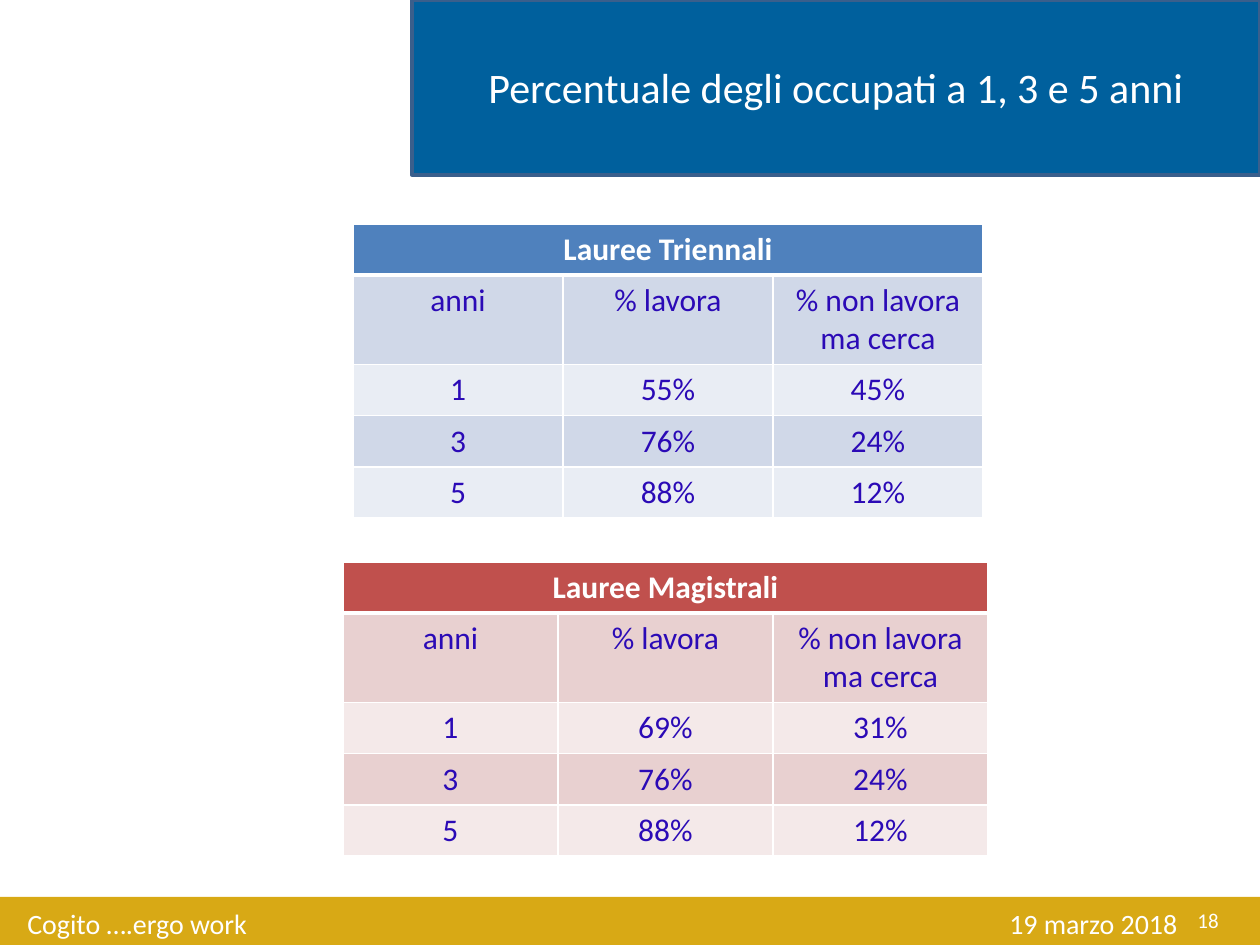
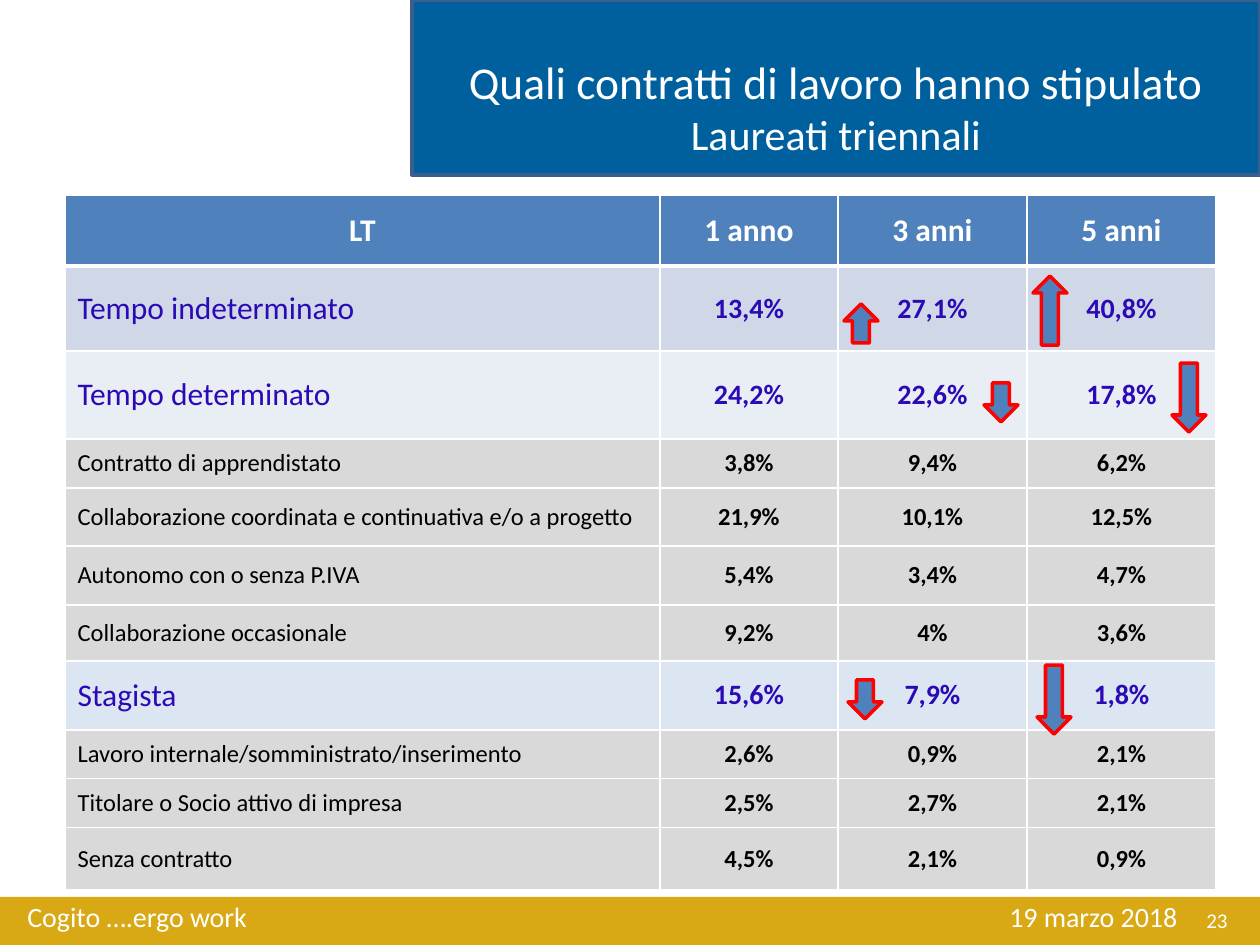
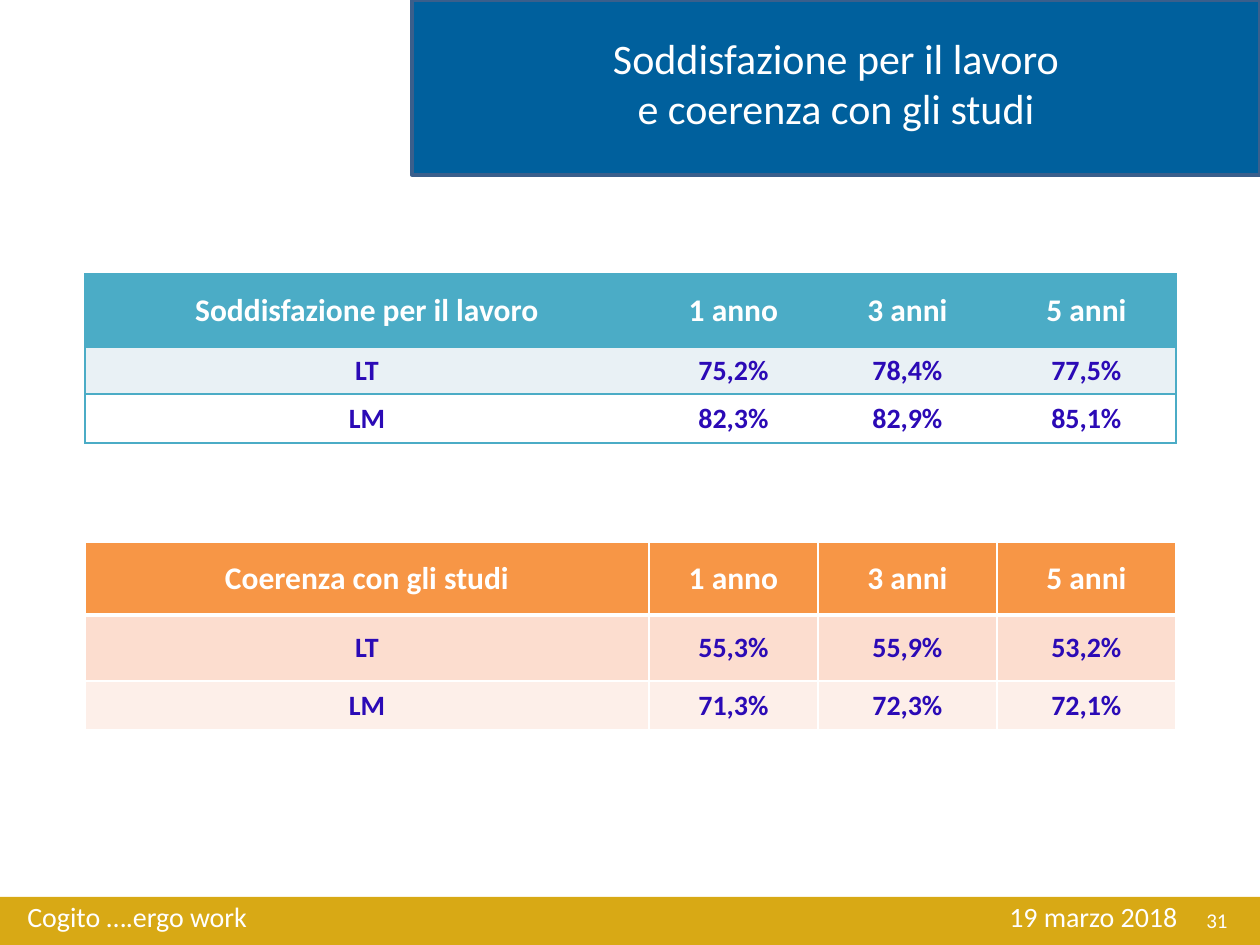
from dataclasses import dataclass
from itertools import product

from lxml.etree import SubElement
from pptx import Presentation
from pptx.dml.color import RGBColor
from pptx.enum.shapes import MSO_SHAPE
from pptx.enum.text import MSO_ANCHOR, MSO_AUTO_SIZE, PP_ALIGN
from pptx.oxml.ns import qn
from pptx.util import Pt

EMU_PER_PX = 914400 / 126
FONT = "Calibri"
WHITE = "FFFFFF"
BLACK = "000000"
INDIGO = "2B0AB6"
GOLD = "D8A915"
NAVY = "00609D"
NAVY_EDGE = "3A5F8C"
BLUE = "4F81BD"
BLUE_LIGHT = "D0D8E8"
BLUE_PALE = "E9EDF4"
BLUE_STAGE = "DCE6F2"
RED = "C0504D"
RED_LIGHT = "E8D0D0"
RED_PALE = "F4E9E9"
TEAL = "4BACC6"
TEAL_PALE = "E9F1F5"
ORANGE = "F79646"
ORANGE_LIGHT = "FCDDCF"
ORANGE_PALE = "FDEFE9"
GREY = "D9D9D9"
ARROW_EDGE = "FF0000"


@dataclass
class RowStyle:
    fill: str
    color: str = INDIGO
    label_size: int = 18
    value_size: int = 18
    label_bold: bool = True
    value_bold: bool = True
    label_alignment: PP_ALIGN = PP_ALIGN.CENTER


def px(length):
    return round(length * EMU_PER_PX)


def rgb(color):
    return RGBColor.from_string(color)


def format_paragraph(paragraph, size, color, bold=False, alignment=PP_ALIGN.LEFT):
    paragraph.alignment = alignment
    for run in paragraph.runs:
        run.font.name = FONT
        run.font.size = Pt(size)
        run.font.bold = bold
        run.font.color.rgb = rgb(color)


def add_shape(slide, kind, left, top, width, height, fill, edge=None):
    shape = slide.shapes.add_shape(kind, px(left), px(top), px(width), px(height))
    shape.shadow.inherit = False
    shape.fill.solid()
    shape.fill.fore_color.rgb = rgb(fill)
    if edge:
        shape.line.color.rgb = rgb(edge)
        shape.line.width = Pt(2)
    else:
        shape.line.fill.background()
    return shape


def add_bands(slide):
    bands = [
        add_shape(slide, MSO_SHAPE.RECTANGLE, 0, 897, 1260, 48, GOLD),
        add_shape(slide, MSO_SHAPE.RECTANGLE, 412, 0, 848, 175, NAVY, NAVY_EDGE),
    ]
    for index, band in enumerate(bands, start=2):
        slide.slide_layout.shapes.element.insert(index, band.element)


def set_title(slide, lines, sizes, top, height, anchor=MSO_ANCHOR.TOP, spacing=1.0):
    title = slide.shapes.title
    title.left, title.top = px(412), px(top)
    title.width, title.height = px(848), px(height)
    text_frame = title.text_frame
    text_frame.text = "\n".join(lines)
    text_frame.auto_size = MSO_AUTO_SIZE.NONE
    text_frame.vertical_anchor = anchor
    for paragraph, size in zip(text_frame.paragraphs, sizes):
        format_paragraph(paragraph, size, WHITE, alignment=PP_ALIGN.CENTER)
        paragraph.line_spacing = spacing


def add_text(slide, text, left, top, width, height, size, alignment, anchor):
    box = slide.shapes.add_textbox(px(left), px(top), px(width), px(height))
    text_frame = box.text_frame
    text_frame.word_wrap = True
    text_frame.vertical_anchor = anchor
    text_frame.text = text
    paragraph = text_frame.paragraphs[0]
    format_paragraph(paragraph, size, WHITE, alignment=alignment)
    return paragraph


def add_footer(slide, number, top=893, number_left=946):
    paragraph = add_text(slide, "Cogito ….ergo work\t19 marzo 2018", 15, top, 1181, 55,
                         16, PP_ALIGN.LEFT, MSO_ANCHOR.TOP)
    tabs = SubElement(paragraph._p.get_or_add_pPr(), qn("a:tabLst"))
    SubElement(tabs, qn("a:tab"), pos=str(px(1150)), algn="r")
    add_text(slide, number, number_left, 895, 294, 50, 12, PP_ALIGN.RIGHT, MSO_ANCHOR.MIDDLE)


def set_border(cell, side, color, width):
    properties = cell._tc.get_or_add_tcPr()
    line = SubElement(properties, qn(f"a:ln{side}"), w=str(Pt(width)))
    if color:
        fill = SubElement(line, qn("a:solidFill"))
        SubElement(fill, qn("a:srgbClr"), val=color)
    else:
        SubElement(line, qn("a:noFill"))


def grid_borders(row, column, last_column):
    return {
        "L": (WHITE, 1),
        "R": (WHITE, 1),
        "T": (WHITE, 3 if row == 1 else 1),
        "B": (WHITE, 3 if row == 0 else 1),
    }


def outline_borders(row, column, last_column):
    return {
        "L": (TEAL if column == 0 else None, 1),
        "R": (TEAL if column == last_column else None, 1),
        "T": (TEAL, 1),
        "B": (TEAL, 1),
    }


def fill_cell(cell, text, style, is_label, anchor):
    cell.fill.solid()
    cell.fill.fore_color.rgb = rgb(style.fill)
    cell.vertical_anchor = anchor
    cell.text = text
    paragraph = cell.text_frame.paragraphs[0]
    if is_label:
        format_paragraph(paragraph, style.label_size, style.color, style.label_bold,
                         style.label_alignment)
    else:
        format_paragraph(paragraph, style.value_size, style.color, style.value_bold,
                         PP_ALIGN.CENTER)


def add_table(slide, left, top, widths, heights, rows, styles,
              anchor=MSO_ANCHOR.MIDDLE, borders=grid_borders):
    frame = slide.shapes.add_table(len(heights), len(widths), px(left), px(top),
                                   px(sum(widths)), px(sum(heights)))
    table = frame.table
    table.first_row = False
    table.horz_banding = False
    for column, width in zip(table.columns, widths):
        column.width = px(width)
    for row, height in zip(table.rows, heights):
        row.height = px(height)
    last_column = len(widths) - 1
    for row, column in product(range(len(heights)), range(len(widths))):
        cell = table.cell(row, column)
        for side, (color, width) in borders(row, column, last_column).items():
            set_border(cell, side, color, width)
        if column < len(rows[row]):
            fill_cell(cell, rows[row][column], styles[row], column == 0, anchor)
    if len(rows[0]) == 1:
        table.cell(0, 0).merge(table.cell(0, last_column))


def add_employment_table(slide, left, top, column_width, heading, shares, colors):
    header, light, pale = colors
    rows = [[heading], ["anni", "% lavora", "% non lavora ma cerca"], *shares]
    body = [RowStyle(fill, label_bold=False, value_bold=False)
            for fill in (light, pale, light, pale)]
    add_table(slide, left, top, [column_width] * 3, [51, 88, 51, 51, 51], rows,
              [RowStyle(header, WHITE), *body], MSO_ANCHOR.TOP)


def add_rating_table(slide, top, heights, heading, ratings, colors, borders):
    rows = [[heading, "1 anno", "3 anni", "5 anni"], *ratings]
    header, *body = colors
    styles = [RowStyle(header, WHITE),
              *[RowStyle(fill, label_size=16, value_size=16) for fill in body]]
    add_table(slide, 85, top, [564, 169, 179, 179], heights, rows, styles, borders=borders)


def add_trend_arrow(slide, left, top, height, rising):
    kind = MSO_SHAPE.UP_ARROW if rising else MSO_SHAPE.DOWN_ARROW
    add_shape(slide, kind, left, top, 34, height, BLUE, ARROW_EDGE)


def build_employment(slide):
    set_title(slide, ["Percentuale degli occupati a 1, 3 e 5 anni"], [24], 4, 171,
              MSO_ANCHOR.MIDDLE, 0.9)
    add_employment_table(
        slide, 353, 224, 210, "Lauree Triennali",
        [["1", "55%", "45%"], ["3", "76%", "24%"], ["5", "88%", "12%"]],
        (BLUE, BLUE_LIGHT, BLUE_PALE))
    add_employment_table(
        slide, 343, 562, 215, "Lauree Magistrali",
        [["1", "69%", "31%"], ["3", "76%", "24%"], ["5", "88%", "12%"]],
        (RED, RED_LIGHT, RED_PALE))
    add_footer(slide, "18", 900, 937)


def build_contracts(slide):
    set_title(slide, ["Quali contratti di lavoro hanno stipulato", "Laureati triennali"],
              [26, 24], 48, 55)
    rows = [
        ["LT", "1 anno", "3 anni", "5 anni"],
        ["Tempo indeterminato", "13,4%", "27,1%", "40,8%"],
        ["Tempo determinato", "24,2%", "22,6%", "17,8%"],
        ["Contratto di apprendistato", "3,8%", "9,4%", "6,2%"],
        ["Collaborazione coordinata e continuativa e/o a progetto", "21,9%", "10,1%", "12,5%"],
        ["Autonomo con o senza P.IVA", "5,4%", "3,4%", "4,7%"],
        ["Collaborazione occasionale", "9,2%", "4%", "3,6%"],
        ["Stagista", "15,6%", "7,9%", "1,8%"],
        ["Lavoro internale/somministrato/inserimento", "2,6%", "0,9%", "2,1%"],
        ["Titolare o Socio attivo di impresa", "2,5%", "2,7%", "2,1%"],
        ["Senza contratto", "4,5%", "2,1%", "0,9%"],
    ]
    permanent, fixed_term, trainee = [
        RowStyle(fill, INDIGO, 18, 16, False, True, PP_ALIGN.LEFT)
        for fill in (BLUE_LIGHT, BLUE_PALE, BLUE_STAGE)
    ]
    minor = RowStyle(GREY, BLACK, 14, 14, False, True, PP_ALIGN.LEFT)
    styles = [RowStyle(BLUE, WHITE), permanent, fixed_term, *[minor] * 4, trainee, *[minor] * 3]
    add_table(slide, 65, 195, [595, 178, 189, 189],
              [71, 85, 88, 49, 58, 59, 56, 69, 49, 49, 62], rows, styles)
    add_footer(slide, "23")
    for left, top, height, rising in [
        (844, 304, 39, True),
        (1033, 276, 69, True),
        (1172, 363, 69, False),
        (984, 383, 39, False),
        (848, 680, 39, False),
        (1037, 665, 69, False),
    ]:
        add_trend_arrow(slide, left, top, height, rising)


def build_satisfaction(slide):
    set_title(slide, ["Soddisfazione per il lavoro", "e coerenza con gli studi"],
              [24, 24], 26, 129)
    add_rating_table(
        slide, 274, [73, 47, 49], "Soddisfazione per il lavoro",
        [["LT", "75,2%", "78,4%", "77,5%"], ["LM", "82,3%", "82,9%", "85,1%"]],
        (TEAL, TEAL_PALE, WHITE), outline_borders)
    add_rating_table(
        slide, 542, [73, 66, 49], "Coerenza con gli studi",
        [["LT", "55,3%", "55,9%", "53,2%"], ["LM", "71,3%", "72,3%", "72,1%"]],
        (ORANGE, ORANGE_LIGHT, ORANGE_PALE), grid_borders)
    add_footer(slide, "31")


def main():
    presentation = Presentation()
    presentation.slide_width = px(1260)
    presentation.slide_height = px(945)
    title_only = presentation.slide_layouts[5]
    builders = [build_employment, build_contracts, build_satisfaction]
    slides = [presentation.slides.add_slide(title_only) for _ in builders]
    add_bands(slides[0])
    for build, slide in zip(builders, slides):
        build(slide)
    presentation.save("out.pptx")


if __name__ == "__main__":
    main()
